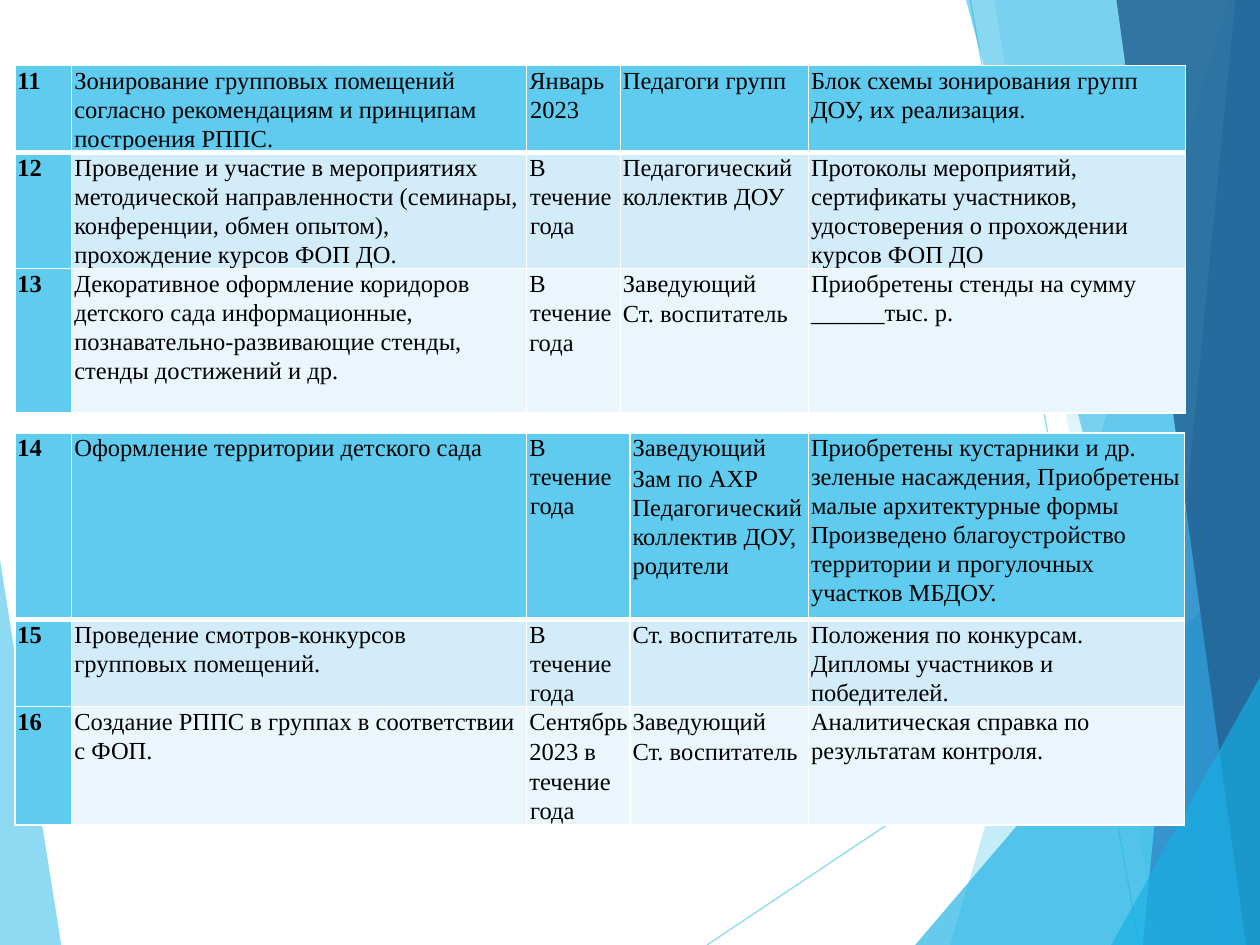
from lxml.etree import SubElement
from pptx import Presentation
from pptx.dml.color import RGBColor
from pptx.enum.shapes import MSO_CONNECTOR
from pptx.oxml.ns import qn
from pptx.util import Pt

ACCENT, TEAL, BLUE, NAVY = "5FCBEF", "17B0E4", "2E83C3", "226292"
BAND_COLORS = [ACCENT, "D2ECF9", "EAF6FC"]


def set_solid(fill, color, opacity=100):
    fill.solid()
    fill.fore_color.rgb = RGBColor.from_string(color)
    if opacity < 100:
        color_element = fill._xPr.find(qn("a:solidFill"))[0]
        SubElement(color_element, qn("a:alpha"), val=str(opacity * 1000))


def add_cell_borders(cell, bottom_width):
    """White borders; call before filling, as the schema puts lines first."""
    properties = cell._tc.get_or_add_tcPr()
    for side, width in (("L", 1), ("R", 1), ("T", 1), ("B", bottom_width)):
        border = SubElement(properties, qn(f"a:ln{side}"), w=str(Pt(width)))
        solid = SubElement(border, qn("a:solidFill"))
        SubElement(solid, qn("a:srgbClr"), val="FFFFFF")


presentation = Presentation()
presentation.slide_width, presentation.slide_height = Pt(720), Pt(540)
slide = presentation.slides.add_slide(presentation.slide_layouts[6])

# Background facets: thin lines, then translucent polygons
for start_x, start_y, end_x, end_y in [(404, 540, 720, 329), (554.5, 0, 651, 540)]:
    line = slide.shapes.add_connector(
        MSO_CONNECTOR.STRAIGHT, Pt(start_x), Pt(start_y), Pt(end_x), Pt(end_y))
    line.line.width = Pt(0.75)
    set_solid(line.line.fill, ACCENT, 70)
    SubElement(line._element.spPr, qn("a:effectLst"))

facets = [
    (ACCENT, 70, [(0, 320), (35, 540), (0, 540)]),
    (ACCENT, 36, [(702, 0), (543, 540), (720, 540), (720, 0)]),
    (ACCENT, 20, [(567.5, 0), (662, 540), (720, 540), (720, 0)]),
    (TEAL, 66, [(523, 540), (720, 309), (720, 540)]),
    (TEAL, 50, [(552.5, 0), (698.5, 540), (720, 540), (720, 0)]),
    (BLUE, 70, [(706.5, 0), (653, 540), (720, 540), (720, 0)]),
    (NAVY, 82, [(637.5, 0), (711.5, 540), (720, 540), (720, 0)]),
    (TEAL, 66, [(635, 540), (720, 387), (720, 540)]),
]
for color, opacity, points in facets:
    builder = slide.shapes.build_freeform(*points[0], scale=Pt(1))
    builder.add_line_segments(points[1:], close=True)
    facet = builder.convert_to_shape()
    facet.shadow.inherit = False
    facet.line.fill.background()
    set_solid(facet.fill, color, opacity)

# Plan tables: top, column widths, row heights, rows
plans = [
    (37.5, [32.5, 260, 53.5, 107.5, 215.5], [49.5, 66, 82.5], [
        ["11",
         "Зонирование групповых помещений согласно рекомендациям и принципам построения РППС.",
         "Январь 2023", "Педагоги групп",
         "Блок схемы зонирования групп ДОУ, их реализация."],
        ["12",
         "Проведение и участие в мероприятиях методической направленности (семинары, "
         "конференции, обмен опытом), прохождение курсов ФОП ДО.",
         "В течение года", "Педагогический коллектив ДОУ",
         "Протоколы мероприятий, сертификаты участников, удостоверения о прохождении "
         "курсов ФОП ДО"],
        ["13",
         "Декоративное оформление коридоров детского сада информационные, "
         "познавательно-развивающие стенды, стенды достижений и др.",
         "В течение\nгода", "Заведующий\nСт. воспитатель",
         "Приобретены стенды на сумму ______тыс. р."],
    ]),
    (247.5, [32.5, 260, 59, 102, 215], [106.5, 49.5, 67.5], [
        ["14", "Оформление территории детского сада", "В течение года",
         "Заведующий\nЗам по АХР Педагогический коллектив ДОУ, родители",
         "Приобретены кустарники и др. зеленые насаждения, Приобретены малые "
         "архитектурные формы Произведено благоустройство территории и прогулочных "
         "участков МБДОУ."],
        ["15", "Проведение смотров-конкурсов групповых помещений.", "В течение года",
         "Ст. воспитатель", "Положения по конкурсам. Дипломы участников и победителей."],
        ["16", "Создание РППС в группах в соответствии с ФОП.",
         "Сентябрь\n2023 в\nтечение года", "Заведующий\nСт. воспитатель",
         "Аналитическая справка по результатам контроля."],
    ]),
]
for top, widths, heights, rows in plans:
    table = slide.shapes.add_table(
        len(rows), len(widths), Pt(8.5), Pt(top), Pt(sum(widths)), Pt(sum(heights))).table
    for column, width in zip(table.columns, widths):
        column.width = Pt(width)
    for row_index, (height, texts) in enumerate(zip(heights, rows)):
        table.rows[row_index].height = Pt(height)
        for column_index, text in enumerate(texts):
            cell = table.cell(row_index, column_index)
            add_cell_borders(cell, bottom_width=3 if row_index == 0 else 1)
            set_solid(cell.fill, ACCENT if column_index == 0 else BAND_COLORS[row_index])
            cell.margin_left, cell.margin_right = Pt(1.5), Pt(0.75)
            cell.margin_top = cell.margin_bottom = 0
            cell.text_frame.text = text
            for paragraph in cell.text_frame.paragraphs:
                paragraph.line_spacing = 1.07
                paragraph.space_after = Pt(0.8)
                if column_index == 2:
                    paragraph_properties = paragraph._p.get_or_add_pPr()
                    paragraph_properties.set("marL", str(Pt(0.5)))
                    paragraph_properties.set("indent", str(-Pt(0.5)))
                font = paragraph.runs[0].font
                font.name, font.size = "Times New Roman", Pt(14)
                font.bold = column_index == 0
                set_solid(font.fill, "000000")

presentation.save("out.pptx")
